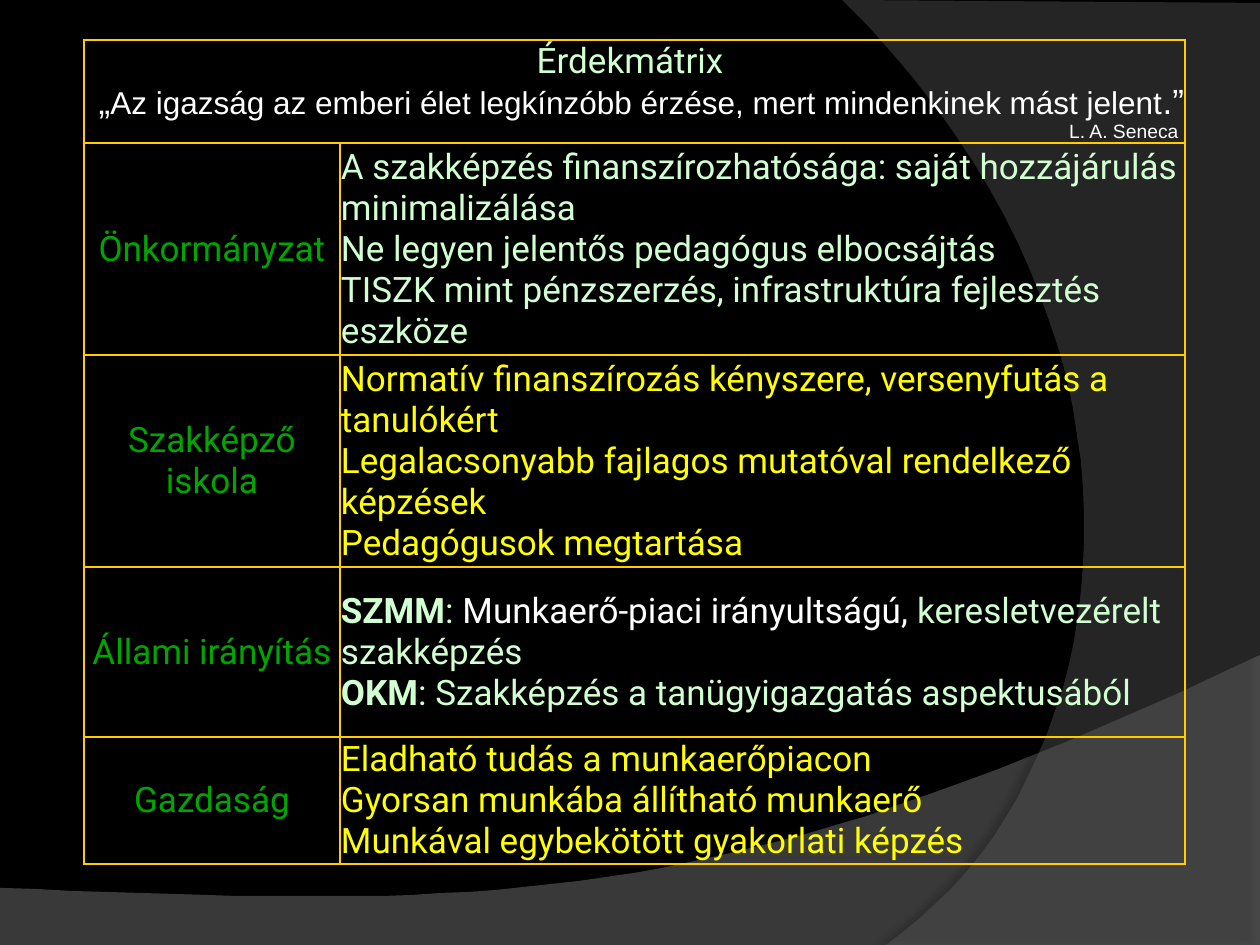
from lxml import etree
from pptx import Presentation
from pptx.dml.color import RGBColor
from pptx.enum.text import MSO_ANCHOR, PP_ALIGN
from pptx.oxml import parse_xml
from pptx.oxml.ns import qn
from pptx.util import Pt

PX = 914400 / 126
MID = MSO_ANCHOR.MIDDLE
LEFT, MIDDLE, RIGHT = PP_ALIGN.LEFT, PP_ALIGN.CENTER, PP_ALIGN.RIGHT
NS = "http://schemas.openxmlformats.org/drawingml/2006/main"
THEME = {
    "back": "000000", "wave": "7F7F7F", "arc": "5E5E5E", "rule": "FFCC00",
    "mint": "D1FFD1", "green": "00A600", "yellow": "FFFF00", "white": "FFFFFF",
    "body": 20, "quote": 18, "source": 11, "line": 1.5,
    "main": "Roboto", "plain": "Arial",
}


def px(count):
    return round(count * PX)


def write(par, parts, align):
    par.alignment = align
    for text, tone, size, face, bold in parts:
        for spot, line in enumerate(text.split("\n")):
            if spot:
                par.add_line_break()
            if line:
                run = par.add_run()
                run.text = line
                run.font.size = Pt(THEME[size])
                run.font.name = THEME[face]
                run.font.bold = bold
                run.font.color.rgb = RGBColor.from_string(THEME[tone])


deck = Presentation()
deck.slide_width, deck.slide_height = px(1260), px(945)
slide = deck.slides.add_slide(deck.slide_layouts[6])
fill = slide.background.fill
fill.solid()
fill.fore_color.rgb = RGBColor.from_string(THEME["back"])

shapes = [
    ("wave", 45, [(0, 888), (0, 946), (1260, 946), (1260, 655)],
     [(704, 919), (493, 906), (0, 888)], (35, 4, 3.5, 270)),
    ("arc", 40, [(1260, 3), (1260, 945), (886, 945)],
     [(1123, 780), (1193, 346), (842, 0)], (45, 4, 4, 180)),
]
for tone, alpha, edge, bend, shade in shapes:
    knots = [edge[-1]] + bend
    curve = []
    for step in range(1, 41):
        t = step / 40
        parts = [(1 - t) ** 3, 3 * t * (1 - t) ** 2, 3 * t * t * (1 - t), t ** 3]
        curve.append(tuple(sum(w * k[axis] for w, k in zip(parts, knots)) for axis in (0, 1)))
    pen = slide.shapes.build_freeform(*edge[0], scale=PX)
    pen.add_line_segments(edge[1:] + curve, close=True)
    form = pen.convert_to_shape()
    form.shadow.inherit = False
    form.line.fill.background()
    form.fill.solid()
    form.fill.fore_color.rgb = RGBColor.from_string(THEME[tone])
    props = form._element.spPr
    color = props.find(qn("a:solidFill"))[0]
    etree.SubElement(color, qn("a:alpha"), val=str(alpha * 1000))
    dim, blur, far, turn = shade
    props.find(qn("a:effectLst")).append(parse_xml(
        f'<a:outerShdw xmlns:a="{NS}" blurRad="{Pt(blur)}" dist="{Pt(far)}" '
        f'dir="{turn * 60000}" algn="ctr" rotWithShape="0"><a:srgbClr val="000000">'
        f'<a:alpha val="{dim * 1000}"/></a:srgbClr></a:outerShdw>'))

wide, high = [256, 845], [103, 212, 212, 170, 127]
frame = slide.shapes.add_table(5, 2, px(84), px(40), px(sum(wide)), px(sum(high)))
table = frame.table
table.first_row = table.horz_banding = False
for col, width in zip(table.columns, wide):
    col.width = px(width)
for row, height in zip(table.rows, high):
    row.height = px(height)

for cell in table.iter_cells():
    cell.vertical_anchor = MID
    cell.margin_left = cell.margin_right = cell.margin_top = px(1)
    cell.margin_bottom = 0
    props = cell._tc.get_or_add_tcPr()
    for side in "LRTB":
        props.append(parse_xml(
            f'<a:ln{side} xmlns:a="{NS}" w="{Pt(THEME["line"])}"><a:solidFill>'
            f'<a:srgbClr val="{THEME["rule"]}"/></a:solidFill></a:ln{side}>'))
    cell.fill.background()

head = table.cell(0, 0)
head.merge(table.cell(0, 1))
text = head.text_frame
write(text.paragraphs[0], [("Érdekmátrix ", "mint", "body", "main", False)], MIDDLE)
write(text.add_paragraph(), [
    ("„", "white", "body", "plain", False),
    ("Az igazság az emberi élet legkínzóbb érzése, mert mindenkinek mást jelent",
     "white", "quote", "plain", False),
    (".” ", "white", "body", "plain", False),
    ("L. A. Seneca ", "white", "source", "plain", False),
], RIGHT)

rows = [
    ("Önkormányzat", [
        ("A szakképzés finanszírozhatósága: saját hozzájárulás minimalizálása\n"
         "Ne legyen jelentős pedagógus elbocsájtás\n"
         "TISZK mint pénzszerzés, infrastruktúra fejlesztés eszköze", "mint", False)]),
    ("Szakképző iskola", [
        ("Normatív finanszírozás kényszere, versenyfutás a tanulókért\n"
         "Legalacsonyabb fajlagos mutatóval rendelkező képzések\n"
         "Pedagógusok megtartása", "yellow", False)]),
    ("Állami irányítás", [
        ("SZMM", "mint", True),
        (": ", "mint", False),
        ("Munkaerő-piaci irányultságú, ", "white", False),
        ("keresletvezérelt szakképzés\n", "mint", False),
        ("OKM", "mint", True),
        (": Szakképzés a tanügyigazgatás aspektusából", "mint", False)]),
    ("Gazdaság", [
        ("Eladható tudás a munkaerőpiacon\n"
         "Gyorsan munkába állítható munkaerő\n"
         "Munkával egybekötött gyakorlati képzés", "yellow", False)]),
]
for spot, (name, goals) in enumerate(rows, 1):
    pair = [([(name, "green", False)], MIDDLE), (goals, LEFT)]
    for col, (bits, align) in enumerate(pair):
        parts = [(words, tone, "body", "main", bold) for words, tone, bold in bits]
        write(table.cell(spot, col).text_frame.paragraphs[0], parts, align)

deck.save("out.pptx")
